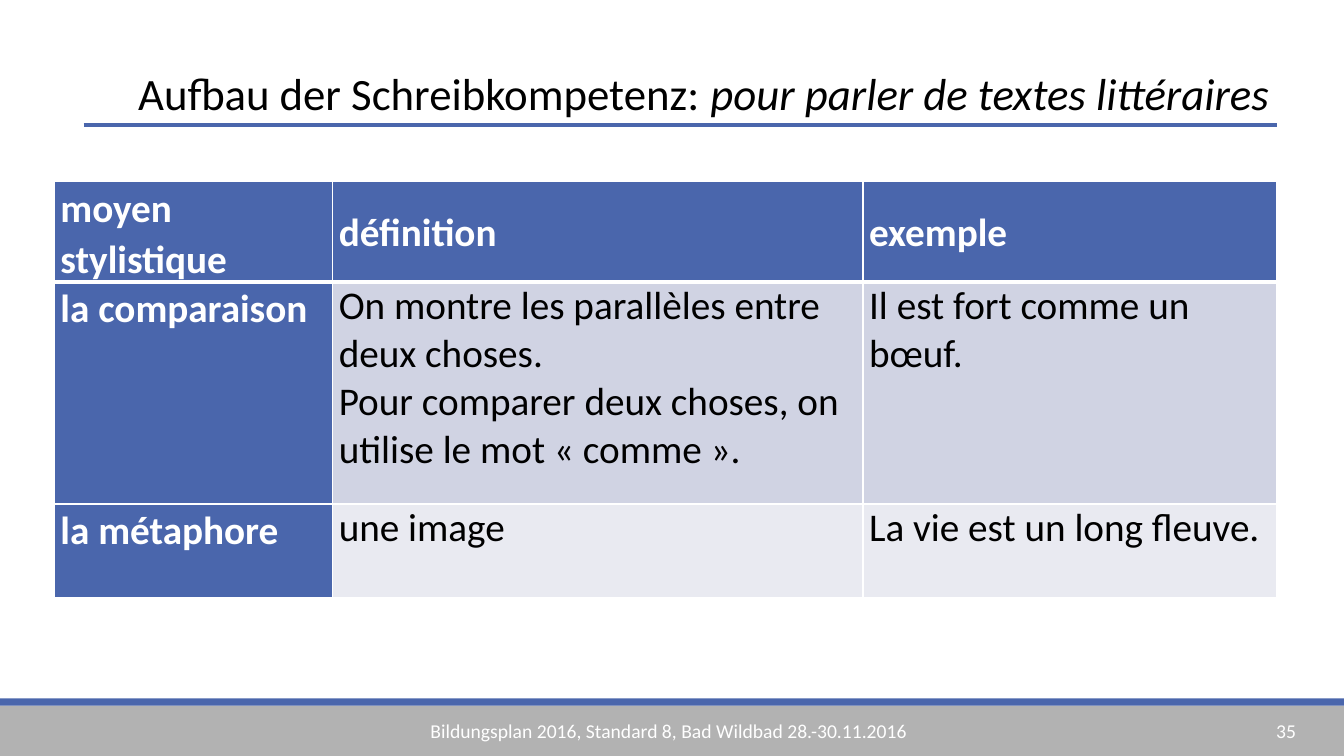
from lxml import etree
from pptx import Presentation
from pptx.dml.color import RGBColor
from pptx.enum.shapes import MSO_CONNECTOR, MSO_SHAPE
from pptx.enum.text import MSO_ANCHOR, MSO_AUTO_SIZE, PP_ALIGN
from pptx.oxml.ns import qn
from pptx.util import Inches, Pt

RECT, STRAIGHT = MSO_SHAPE.RECTANGLE, MSO_CONNECTOR.STRAIGHT
TOP, MIDDLE = MSO_ANCHOR.TOP, MSO_ANCHOR.MIDDLE
LEFT, NO_FIT = PP_ALIGN.LEFT, MSO_AUTO_SIZE.NONE

BLUE = RGBColor(0x4A, 0x66, 0xAC)
GREY = RGBColor(0xB2, 0xB2, 0xB2)
BANDS = [RGBColor(0xD0, 0xD3, 0xE3), RGBColor(0xE9, 0xEA, 0xF1)]
WHITE = RGBColor(0xFF, 0xFF, 0xFF)
BLACK = RGBColor(0, 0, 0)

COLUMN_WIDTHS = [2.76, 5.26, 4.1]
ROW_HEIGHTS = [1, 2.2, 0.93]
ROWS = [
    ["moyen stylistique", "définition", "exemple"],
    ["la comparaison",
     "On montre les parallèles entre deux choses.\n"
     "Pour comparer deux choses, on utilise le mot « comme ».",
     "Il est fort comme un bœuf."],
    ["la métaphore", "une image", "La vie est un long fleuve."],
]


class SlideBuilder:
    font = "Calibri"

    def __init__(self, slide):
        self.slide = slide

    def format_run(self, r, size, color, bold=False, italic=False):
        r.font.name, r.font.size = self.font, Pt(size)
        r.font.color.rgb = color
        r.font.bold, r.font.italic = bold, italic

    def bar(self, top, height, color):
        sp = self.slide.shapes.add_shape(
            RECT, 0, Inches(top), Inches(13.33), Inches(height))
        sp.shadow.inherit = False
        sp.fill.solid()
        sp.fill.fore_color.rgb = color
        sp.line.fill.background()

    def text(self, left, top, width, height, text, size, color):
        sp = self.slide.shapes.add_textbox(
            Inches(left), Inches(top), Inches(width), Inches(height))
        tf = sp.text_frame
        tf.word_wrap = True
        tf.text = text
        self.format_run(tf.paragraphs[0].runs[0], size, color)

    def title(self, plain, italic):
        sp = self.slide.shapes.title
        sp.left, sp.top = Inches(1.27), Inches(0.6)
        sp.width, sp.height = Inches(11.56), Inches(0.64)
        tf = sp.text_frame
        tf.auto_size, tf.vertical_anchor = NO_FIT, TOP
        p = tf.paragraphs[0]
        p.alignment = LEFT
        for text, slanted in ((plain, False), (italic, True)):
            r = p.add_run()
            r.text = text
            self.format_run(r, 32, BLACK, italic=slanted)

    def rule(self, left, right, y):
        line = self.slide.shapes.add_connector(
            STRAIGHT, Inches(left), Inches(y), Inches(right), Inches(y))
        line.line.color.rgb = BLUE
        line.line.width = Pt(2.25)
        etree.SubElement(line._element.spPr, qn("a:effectLst"))

    def borders(self, cell, top, bottom):
        """Draw white cell edges; the schema wants left, right, top, bottom."""
        tc_pr = cell._tc.get_or_add_tcPr()
        for side, width in zip("LRTB", (1, 1, top, bottom)):
            ln = etree.SubElement(tc_pr, qn(f"a:ln{side}"), w=str(Pt(width)))
            fill = etree.SubElement(ln, qn("a:solidFill"))
            etree.SubElement(fill, qn("a:srgbClr"), val=str(WHITE))

    def cell(self, cell, text, row, col):
        heading = row == 0 or col == 0
        self.borders(cell, 3 if row == 1 else 1, 3 if row == 0 else 1)
        cell.fill.solid()
        cell.fill.fore_color.rgb = BLUE if heading else BANDS[row - 1]
        cell.margin_left = cell.margin_right = Inches(0.06)
        cell.margin_top = cell.margin_bottom = 0
        cell.vertical_anchor = MIDDLE if row == 0 and col > 0 else TOP
        cell.text_frame.text = text
        for p in cell.text_frame.paragraphs:
            if heading:
                p.line_spacing = 1.07
                p.space_before = p.space_after = Pt(6)
            self.format_run(p.runs[0], 28, WHITE if heading else BLACK, heading)

    def table(self, left, top):
        table = self.slide.shapes.add_table(
            len(ROWS), len(COLUMN_WIDTHS), Inches(left), Inches(top),
            Inches(sum(COLUMN_WIDTHS)), Inches(sum(ROW_HEIGHTS))).table
        for column, width in zip(table.columns, COLUMN_WIDTHS):
            column.width = Inches(width)
        for i, (height, texts) in enumerate(zip(ROW_HEIGHTS, ROWS)):
            table.rows[i].height = Inches(height)
            for j, text in enumerate(texts):
                self.cell(table.cell(i, j), text, i, j)


def main():
    prs = Presentation()
    prs.slide_width, prs.slide_height = Inches(13.33), Inches(7.5)
    s = SlideBuilder(prs.slides.add_slide(prs.slide_layouts[5]))
    s.bar(7, 0.5, GREY)
    s.bar(6.93, 0.07, BLUE)
    s.text(4.17, 7.08, 4.99, 0.34,
           "Bildungsplan 2016, Standard 8, Bad Wildbad 28.-30.11.2016", 14, WHITE)
    s.text(12.56, 7.08, 0.77, 0.34, "35", 14, WHITE)
    s.rule(0.83, 12.67, 1.24)
    s.title("Aufbau der Schreibkompetenz: ", "pour parler de textes littéraires")
    s.table(0.54, 1.8)
    prs.save("out.pptx")


if __name__ == "__main__":
    main()
